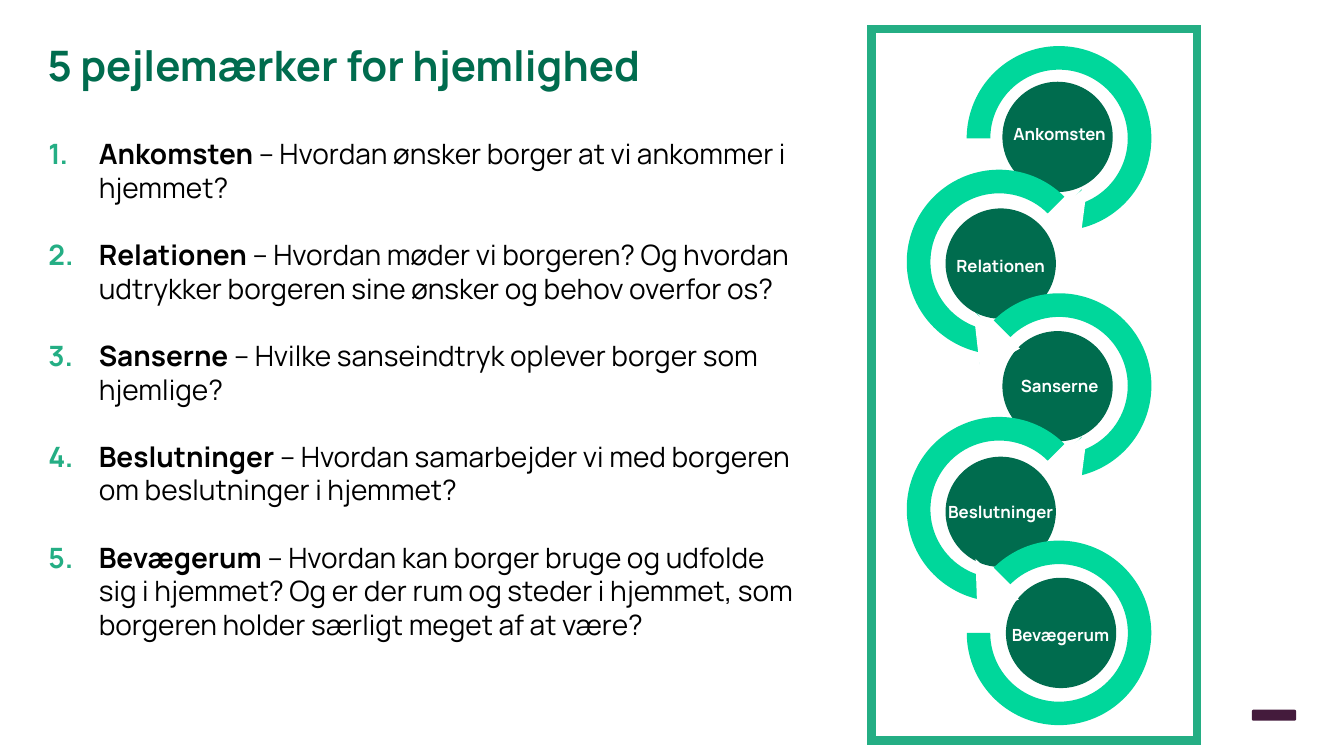
"""Build the slide with five landmarks for homeliness."""
from collections import namedtuple
from dataclasses import dataclass

from lxml.etree import SubElement
from pptx import Presentation
from pptx.dml.color import RGBColor
from pptx.enum.shapes import MSO_SHAPE
from pptx.enum.text import PP_ALIGN
from pptx.oxml.ns import qn
from pptx.util import Pt


@dataclass(frozen=True)
class Theme:
    """Colours, font and type sizes."""
    dark: str = "006C4E"
    accent: str = "24AE84"
    ring: str = "00D79B"
    plum: str = "441B3C"
    white: str = "FFFFFF"
    black: str = "000000"
    font: str = "Manrope"
    title_size: int = 30
    body_size: int = 20
    label_size: int = 12


THEME = Theme()
Box = namedtuple("Box", "left top width height")
Arc = namedtuple("Arc", "kind size adjustments")
Landmark = namedtuple("Landmark", "name question arc disc_shift label_shift notch")

RIGHT_START = Arc(MSO_SHAPE.CIRCULAR_ARROW, 153.4, (0.11, 11.423, 45, 108, 0.125))
RIGHT = Arc(MSO_SHAPE.CIRCULAR_ARROW, 153.4, (0.11, 11.423, 45, 135, 0.125))
LEFT = Arc(MSO_SHAPE.LEFT_CIRCULAR_ARROW, 153.4, (0.11, 11.423, 63, 189, 0.125))
RIGHT_END = Arc(MSO_SHAPE.BLOCK_ARC, 131.8, (135, 108, 0.127))

LANDMARKS = (
    Landmark("Ankomsten", "Hvordan ønsker borger at vi ankommer i hjemmet?",
             RIGHT_START, (-1.1, -1.1), (0.4, -3.2), (10.1, 51.5, 29.9)),
    Landmark("Relationen", "Hvordan møder vi borgeren? Og hvordan udtrykker "
             "borgeren sine ønsker og behov overfor os?",
             LEFT, (1.1, 1.1), (1.1, 2.5), (-8.6, 52.9, 331)),
    Landmark("Sanserne", "Hvilke sanseindtryk oplever borger som hjemlige?",
             RIGHT, (-1.1, 0.4), (0.4, 0.4), (10.1, 51.5, 29.9)),
    Landmark("Beslutninger", "Hvordan samarbejder vi med borgeren om "
             "beslutninger i hjemmet?",
             LEFT, (1.1, 1.8), (1.1, 1.8), (-8.6, 53.6, 335.5)),
    Landmark("Bevægerum", "Hvordan kan borger bruge og udfolde sig i hjemmet? "
             "Og er der rum og steder i hjemmet, som borgeren holder særligt "
             "meget af at være?",
             RIGHT_END, (1.4, 0), (1.1, 1.1), None),
)


def colour(code):
    """Turn a hex code into a colour."""
    return RGBColor.from_string(code)


def centred(x, y, width, height):
    """Return the box of the given size around a centre."""
    return Box(x - width / 2, y - height / 2, width, height)


def add_figure(page, kind, box, fill=None, line=None, line_width=1):
    """Add a preset shape with flat fill and mitred line."""
    shape = page.shapes.add_shape(kind, *map(Pt, box))
    shape.shadow.inherit = False
    if fill:
        shape.fill.solid()
        shape.fill.fore_color.rgb = colour(fill)
    else:
        shape.fill.background()
    if line:
        shape.line.color.rgb = colour(line)
        shape.line.width = Pt(line_width)
        outline = shape._element.spPr.find(qn("a:ln"))
        SubElement(outline, qn("a:miter"), lim="800000")
    else:
        shape.line.fill.background()
    return shape


def add_frame(page, box):
    """Add a wrapping text box without margins and return its text frame."""
    frame = page.shapes.add_textbox(*map(Pt, box)).text_frame
    frame.margin_left = frame.margin_right = 0
    frame.margin_top = frame.margin_bottom = 0
    frame.word_wrap = True
    return frame


def style(para, size, code, bold=None):
    """Set the font of a paragraph."""
    para.font.name = THEME.font
    para.font.size = Pt(size)
    para.font.color.rgb = colour(code)
    para.font.bold = bold


def number(para, indent):
    """Give a paragraph a coloured automatic number and hanging indent."""
    properties = para._p.get_or_add_pPr()
    properties.set("marL", str(Pt(indent)))
    properties.set("indent", str(-Pt(indent)))
    bullet_colour = SubElement(properties, qn("a:buClr"))
    SubElement(bullet_colour, qn("a:srgbClr"), val=THEME.accent)
    SubElement(properties, qn("a:buFont"), typeface="+mj-lt")
    SubElement(properties, qn("a:buAutoNum"), type="arabicPeriod")
    defaults = properties.find(qn("a:defRPr"))
    if defaults is not None:
        properties.append(defaults)


def add_title(page, box):
    """Place the slide heading."""
    para = add_frame(page, box).paragraphs[0]
    para.text = "5 pejlemærker for hjemlighed"
    para.line_spacing = 0.83
    style(para, THEME.title_size, THEME.dark, True)


def add_questions(page, box):
    """Place the numbered list of landmarks and their questions."""
    frame = add_frame(page, box)
    for index, landmark in enumerate(LANDMARKS):
        para = frame.add_paragraph() if index else frame.paragraphs[0]
        para.space_before = Pt(24 if index else 0)
        style(para, THEME.body_size, THEME.black)
        number(para, 36)
        for text, bold in ((landmark.name, True), (f" – {landmark.question}", False)):
            span = para.add_run()
            span.text = text
            span.font.bold = bold


def add_chain(page, box):
    """Place the framed chain of discs and arcs."""
    stops = [(landmark,
              box.left + (91.1 if index % 2 else 133.9),
              box.top + 78.1 + 88.3 * index)
             for index, landmark in enumerate(LANDMARKS)]
    for landmark, x, y in stops:
        shift_x, shift_y = landmark.disc_shift
        add_figure(page, MSO_SHAPE.OVAL, centred(x + shift_x, y + shift_y, 77.8, 77.8),
                   THEME.dark, THEME.dark)
    for landmark, x, y in stops:
        arc = landmark.arc
        ring = add_figure(page, arc.kind, centred(x, y, arc.size, arc.size), THEME.ring)
        for index, value in enumerate(arc.adjustments):
            ring.adjustments[index] = value
    for landmark, x, y in stops:
        if landmark.notch:
            shift_x, shift_y, angle = landmark.notch
            notch = add_figure(page, MSO_SHAPE.ISOSCELES_TRIANGLE,
                               centred(x + shift_x, y + shift_y, 31, 37.4),
                               THEME.white, THEME.white)
            notch.rotation = angle
    for landmark, x, y in stops:
        shift_x, shift_y = landmark.label_shift
        label_box = centred(x + shift_x, y + shift_y, 84, 14.4)
        para = add_frame(page, label_box).paragraphs[0]
        para.text = landmark.name
        para.alignment = PP_ALIGN.CENTER
        style(para, THEME.label_size, THEME.white, True)
    add_figure(page, MSO_SHAPE.RECTANGLE, box, line=THEME.accent, line_width=6)


def add_corner_mark(page, box):
    """Place a plain mark in the corner."""
    add_figure(page, MSO_SHAPE.ROUNDED_RECTANGLE, box, THEME.plum)


def main():
    """Build and save the deck."""
    deck = Presentation()
    deck.slide_width, deck.slide_height = Pt(960), Pt(540)
    page = deck.slides.add_slide(deck.slide_layouts[6])
    add_corner_mark(page, Box(894.2, 506.9, 31.7, 7.9))
    add_title(page, Box(33.8, 34.2, 581.8, 54.7))
    add_questions(page, Box(34.6, 97.7, 540, 388.1))
    add_chain(page, Box(622.6, 20.8, 232.6, 508.3))
    deck.save("out.pptx")


if __name__ == "__main__":
    main()
